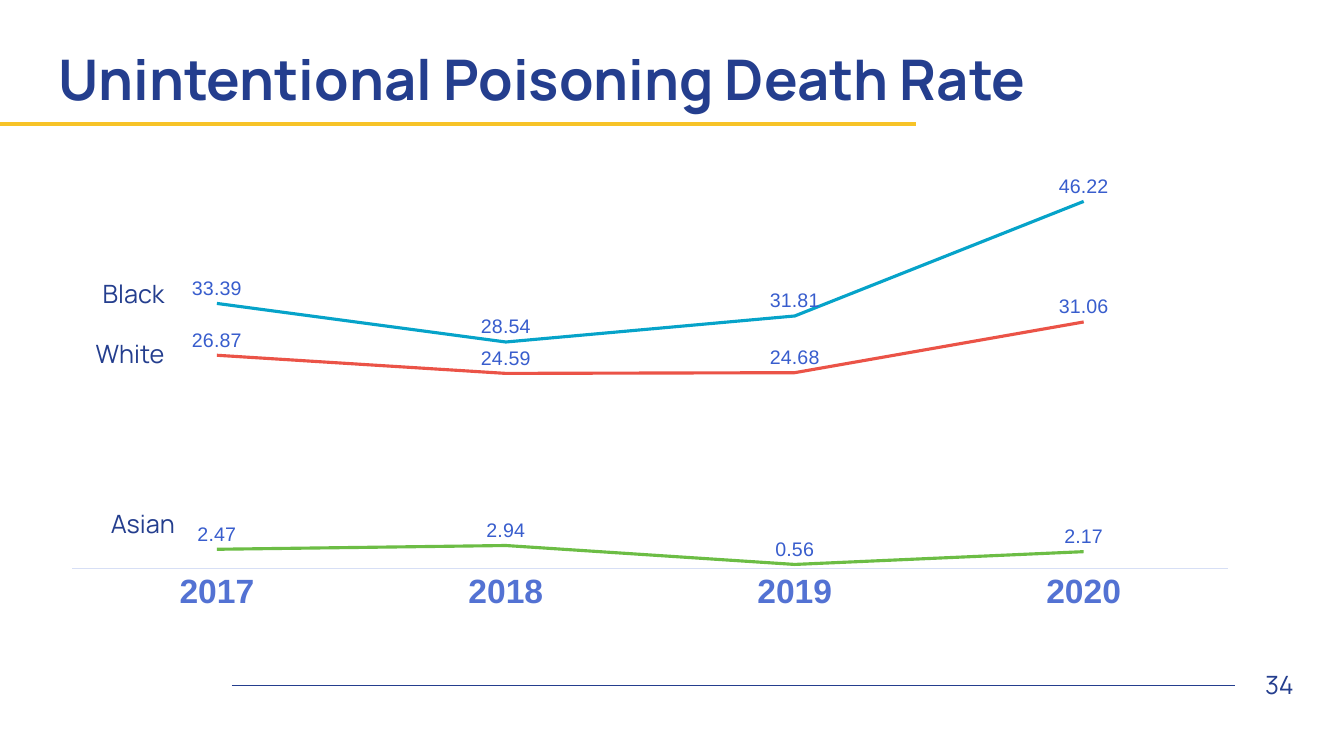
import pptx
import pptx.util
import pptx.dml.color
import pptx.chart.data
import pptx.enum.chart
import pptx.enum.shapes
import pptx.enum.text
import lxml.etree
from dataclasses import dataclass

Inches = pptx.util.Inches
Pt = pptx.util.Pt
Align = pptx.enum.text.PP_ALIGN
Anchor = pptx.enum.text.MSO_ANCHOR


@dataclass(frozen=True)
class Theme:
    navy: str = "243E8E"
    gold: str = "F7C327"
    axis: str = "D7DFF5"
    year: str = "5372D3"
    value: str = "385DCD"
    head: str = "Manrope"
    body: str = "Arial"
    title: int = 40
    years: int = 24
    text: int = 18
    values: int = 14
    small: int = 10


THEME = Theme()
YEARS = ["2017", "2018", "2019", "2020"]
# Group, line colour, rates, label left and top within the chart box
RATES = [
    ("White", "EB5347", (26.87, 24.59, 24.68, 31.06), 0.37, 1.70),
    ("Black", "06A3C9", (33.39, 28.54, 31.81, 46.22), 0.44, 1.10),
    ("Asian", "6CBD45", (2.47, 2.94, 0.56, 2.17), 0.52, 3.38),
]


def rgb(code):
    return pptx.dml.color.RGBColor.from_string(code)


def apply(item, **values):
    for name, value in values.items():
        setattr(item, name, value)


def style(font, face, size, color, bold=False):
    apply(font, name=face, size=Pt(size), bold=bold)
    font.color.rgb = rgb(color)


def stroke(line, color, width):
    line.color.rgb = rgb(color)
    line.width = Pt(width)


def write(slide, box, text, size, bold=False, align=Align.LEFT,
          anchor=Anchor.TOP, space=1.0):
    shape = slide.shapes.add_textbox(*map(Inches, box))
    frame = shape.text_frame
    apply(frame, word_wrap=True, vertical_anchor=anchor)
    para = frame.paragraphs[0]
    apply(para, text=text, alignment=align, line_spacing=space)
    style(para.runs[0].font, THEME.head, size, THEME.navy, bold)


def rule(slide, left, top, width, color, weight):
    line = slide.shapes.add_connector(
        pptx.enum.shapes.MSO_CONNECTOR.STRAIGHT,
        Inches(left), Inches(top), Inches(left + width), Inches(top))
    stroke(line.line, color, weight)
    props = line._element.spPr
    lxml.etree.SubElement(props, pptx.oxml.ns.qn("a:effectLst"))


def header(slide, left, top, width, height):
    # Title over a gold rule from the slide edge
    rule(slide, 0, top + height, 9.09, THEME.gold, 3)
    write(slide, (left, top, width, height),
          "Unintentional Poisoning Death Rate", THEME.title,
          bold=True, anchor=Anchor.MIDDLE, space=0.9)


def footer(slide, left, top, width, height):
    # Thin rule with the page number at its end
    page = 0.68
    span = width - page
    rule(slide, left, top + 0.21, span, THEME.navy, 1)
    write(slide, (left + span, top, page, height), "34", THEME.text,
          align=Align.RIGHT, anchor=Anchor.MIDDLE)


def trend(slide, left, top, width, height):
    # Line chart of yearly rates
    data = pptx.chart.data.CategoryChartData(number_format="0.00")
    data.categories = YEARS
    for group, _, rates, _, _ in RATES:
        data.add_series(group, rates)
    chart = slide.shapes.add_chart(
        pptx.enum.chart.XL_CHART_TYPE.LINE,
        *map(Inches, (left, top, width, height)), data).chart
    apply(chart, has_legend=False, has_title=False)
    style(chart.font, THEME.body, THEME.small, THEME.navy)

    # Axes
    tick = pptx.enum.chart.XL_TICK_MARK.NONE
    apply(chart.value_axis, visible=False, has_major_gridlines=False,
          minimum_scale=0, maximum_scale=50)
    years = chart.category_axis
    apply(years, major_tick_mark=tick, minor_tick_mark=tick,
          has_major_gridlines=False)
    style(years.tick_labels.font, THEME.body, THEME.years, THEME.year, True)
    stroke(years.format.line, THEME.axis, 0.75)

    # Lines, their values and group names
    chart.plots[0].vary_by_categories = False
    for series, (group, color, _, x, y) in zip(chart.plots[0].series, RATES):
        series.smooth = False
        series.marker.style = pptx.enum.chart.XL_MARKER_STYLE.NONE
        stroke(series.format.line, color, 2.25)
        labels = series.data_labels
        apply(labels, show_value=True,
              position=pptx.enum.chart.XL_LABEL_POSITION.ABOVE)
        style(labels.font, THEME.body, THEME.values, THEME.value)
        write(slide, (left + x, top + y, 0.95, 0.4), group, THEME.text)


def main():
    deck = pptx.Presentation()
    apply(deck, slide_width=Inches(13.33), slide_height=Inches(7.5))
    slide = deck.slides.add_slide(deck.slide_layouts[6])
    header(slide, 0.48, 0.4, 11.94, 0.83)
    footer(slide, 2.3, 6.59, 10.63, 0.4)
    trend(slide, 0.48, 1.61, 11.94, 4.54)
    deck.save("out.pptx")


if __name__ == "__main__":
    main()
